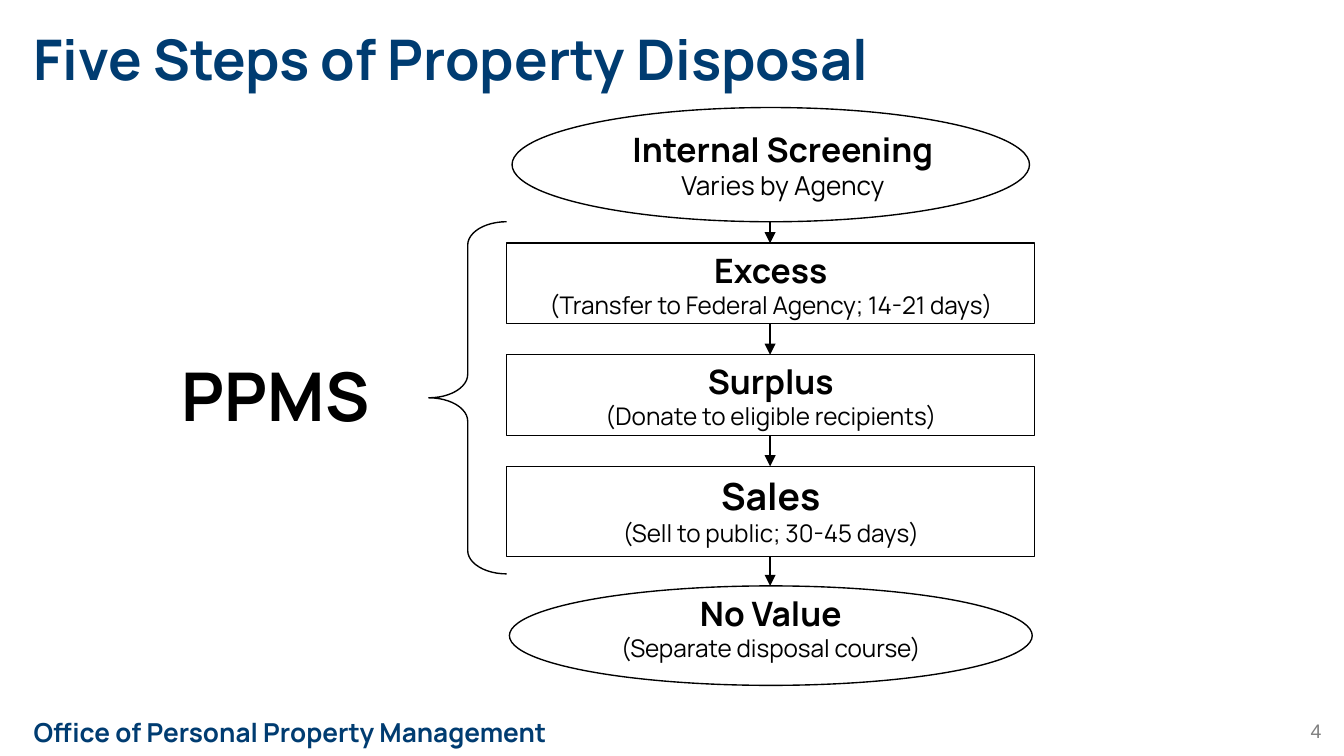
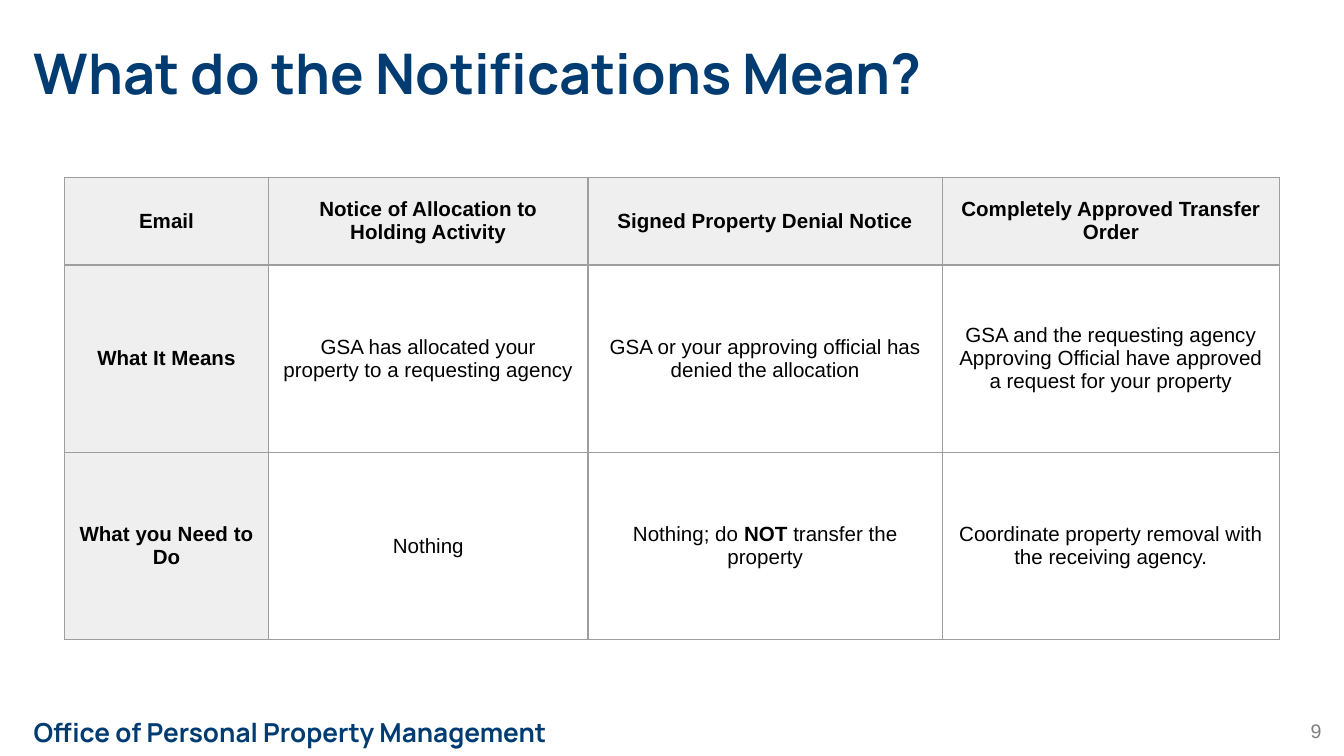
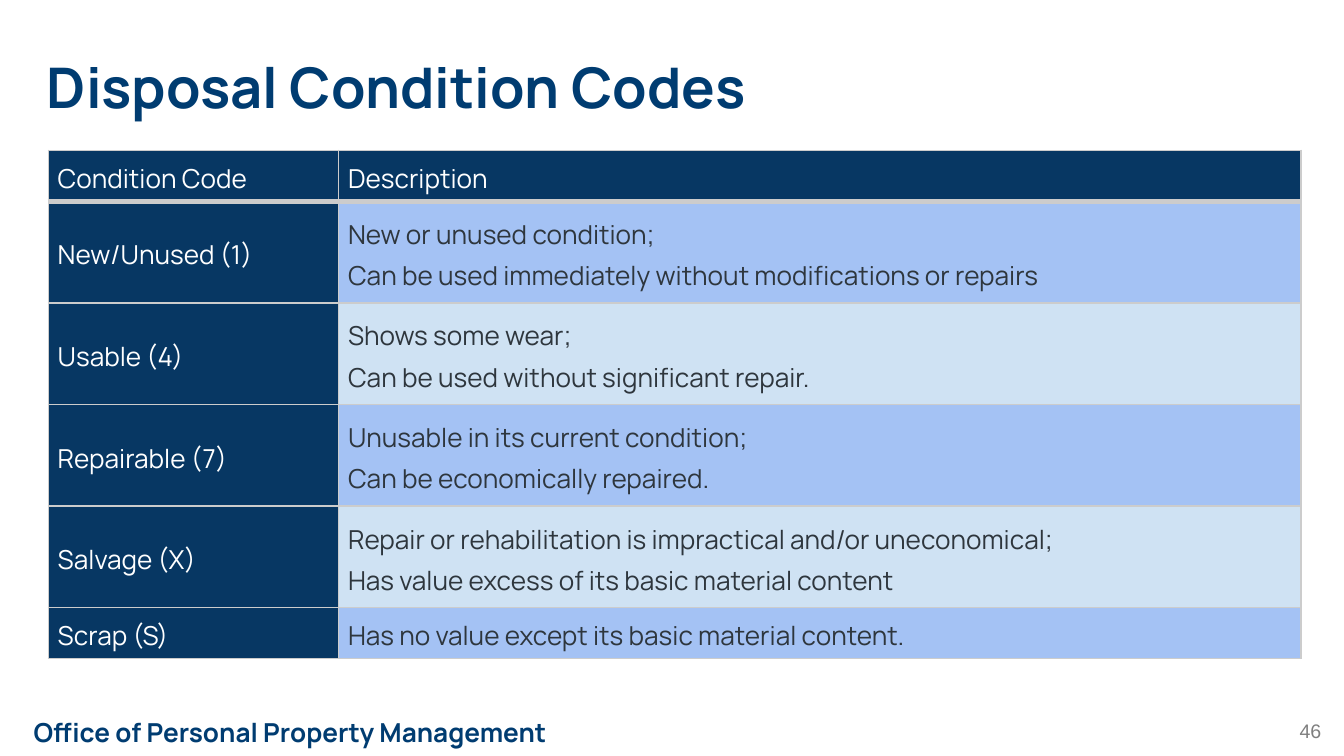
from dataclasses import dataclass, replace

import pptx
import pptx.util
import pptx.dml.color
import pptx.enum.shapes
import pptx.enum.text
import pptx.oxml.ns
from lxml import etree

Inches = pptx.util.Inches
ALIGN = pptx.enum.text.PP_ALIGN
ANCHOR = pptx.enum.text.MSO_ANCHOR
SHAPE = pptx.enum.shapes.MSO_SHAPE


@dataclass(frozen=True)
class Style:
    size: float
    color: str
    font: str = "Manrope"
    bold: bool = False
    align: int = ALIGN.LEFT
    spacing: float = 1.0


class Theme:
    BLACK, WHITE, LIGHT_GRAY = "000000", "FFFFFF", "EFEFEF"
    NAVY, BRAND = "073763", "003C71"
    BAND_DARK, BAND_LIGHT = "A4C2F4", "CFE2F3"
    GRID_GRAY, GRID_SILVER = "9E9E9E", "CCCCCC"
    LINE = 0.75
    TITLE = Style(30, BRAND, bold=True)
    FOOTER = Style(14, BRAND, bold=True)
    NUMBER = Style(10.5, "7F7F7F", "Arial", align=ALIGN.RIGHT)
    SYSTEM = Style(36, BLACK, bold=True, align=ALIGN.CENTER)
    STEP = Style(18, BLACK, bold=True, align=ALIGN.CENTER)
    DETAIL = Style(13, BLACK, align=ALIGN.CENTER)
    NOTICE = Style(11, BLACK, "Arial", align=ALIGN.CENTER)
    CODE = Style(14, WHITE, spacing=1.15)
    DESCRIPTION = Style(14, "2E363D", spacing=1.15)


def rgb(value):
    return pptx.dml.color.RGBColor.from_string(value)


def format_paragraph(p, style):
    p.alignment = style.align
    p.line_spacing = style.spacing
    for r in p.runs:
        r.font.name = style.font
        r.font.size = pptx.util.Pt(style.size)
        r.font.bold = style.bold
        r.font.color.rgb = rgb(style.color)


def write(tf, text, *styles):
    """Give each paragraph its style; the last style serves the rest."""
    tf.text = text
    for i, p in enumerate(tf.paragraphs):
        format_paragraph(p, styles[min(i, len(styles) - 1)])


def embolden(p, word, style):
    before, word, after = p.text.partition(word)
    p.text = before
    for part in (word, after):
        p.add_run().text = part
    format_paragraph(p, style)
    p.runs[1].font.bold = True


def set_margins(target, x, y):
    target.margin_left = target.margin_right = Inches(x)
    target.margin_top = target.margin_bottom = Inches(y)


def add_text(s, box, text, *styles, margins=(0.1, 0.05), anchor=ANCHOR.TOP):
    tf = s.shapes.add_textbox(*map(Inches, box)).text_frame
    tf.word_wrap = True
    tf.vertical_anchor = anchor
    set_margins(tf, *margins)
    write(tf, text, *styles)


def add_shape(s, kind, box, fill=None, line=None):
    sp = s.shapes.add_shape(kind, *map(Inches, box))
    sp.shadow.inherit = False
    if fill:
        sp.fill.solid()
        sp.fill.fore_color.rgb = rgb(fill)
    else:
        sp.fill.background()
    if line:
        sp.line.color.rgb = rgb(line)
        sp.line.width = pptx.util.Pt(Theme.LINE)
    else:
        sp.line.fill.background()
    return sp


def add_text_shape(s, box, text, *styles, line=None):
    sp = add_shape(s, SHAPE.RECTANGLE, box, Theme.WHITE, line)
    tf = sp.text_frame
    tf.word_wrap = True
    tf.vertical_anchor = ANCHOR.TOP
    set_margins(tf, 0.1, 0.05)
    write(tf, text, *styles)


def add_down_arrow(s, x, top, bottom):
    line = s.shapes.add_connector(
        pptx.enum.shapes.MSO_CONNECTOR.STRAIGHT,
        Inches(x), Inches(top), Inches(x), Inches(bottom))
    line.line.color.rgb = rgb(Theme.BLACK)
    line.line.width = pptx.util.Pt(Theme.LINE)
    qn = pptx.oxml.ns.qn
    etree.SubElement(line.line._get_or_add_ln(), qn("a:tailEnd"), type="triangle")
    etree.SubElement(line._element.spPr, qn("a:effectLst"))


def set_borders(cell, color, **widths):
    """Draw the borders named L, R, T and B, in that order, in points."""
    qn = pptx.oxml.ns.qn
    tc_pr = cell._tc.get_or_add_tcPr()
    for side, width in widths.items():
        ln = etree.SubElement(tc_pr, qn(f"a:ln{side}"),
                              w=str(pptx.util.Pt(width)))
        fill = etree.SubElement(ln, qn("a:solidFill"))
        etree.SubElement(fill, qn("a:srgbClr"), val=color)


def add_table(s, box, cols, rows, texts, margins, look, grid, width,
              header_width):
    """Share the box out by cols and rows; look(row, col) gives style and fill."""
    left, top, table_width, table_height = map(Inches, box)
    table = s.shapes.add_table(len(rows), len(cols), left, top,
                               table_width, table_height).table
    table.first_row = table.horz_banding = False
    for col, share in zip(table.columns, cols):
        col.width = int(table_width * share / sum(cols))
    for i, share in enumerate(rows):
        table.rows[i].height = int(table_height * share / sum(rows))
        for j, text in enumerate(texts[i]):
            cell = table.cell(i, j)
            style, fill = look(i, j)
            set_margins(cell, *margins)
            cell.vertical_anchor = ANCHOR.MIDDLE
            write(cell.text_frame, text, style)
            set_borders(cell, grid, L=width, R=width,
                        T=header_width if i == 1 else width,
                        B=header_width if i == 0 else width)
            if fill:
                cell.fill.solid()
                cell.fill.fore_color.rgb = rgb(fill)
            else:
                cell.fill.background()
    return table


def add_slide(prs, title, number, title_top=0.29, title_margin=0):
    s = prs.slides.add_slide(prs.slide_layouts[6])
    add_text(s, (0.25, 5.35, 4.42, 0.19), "Office of Personal Property Management",
             Theme.FOOTER, margins=(0, 0), anchor=ANCHOR.MIDDLE)
    add_text(s, (9.46, 5.3, 0.47, 0.28), str(number), Theme.NUMBER)
    add_text(s, (0.25, title_top, 8.51, 0.56), title, Theme.TITLE,
             margins=(title_margin, title_margin))
    return s


def build_steps(prs):
    s = add_slide(prs, "Five Steps of Property Disposal", 4, title_top=0.18)
    add_text_shape(s, (1.09, 2.59, 1.92, 0.56), "PPMS", Theme.SYSTEM)
    brace = add_shape(s, SHAPE.LEFT_BRACE, (3.19, 1.65, 0.58, 2.62),
                      line=Theme.BLACK)
    brace.adjustments[0] = 0.3

    step, detail = Theme.STEP, Theme.DETAIL
    screening, no_value = (3.81, 0.8, 3.85, 0.85), (3.79, 4.36, 3.89, 0.74)
    boxes = [
        (1.81, 0.6, "Excess\n(Transfer to Federal Agency; 14-21 days)", step),
        (2.64, 0.6, "Surplus\n(Donate to eligible recipients)", step),
        (3.47, 0.67, "Sales\n(Sell to public; 30-45 days)",
         replace(step, size=20)),
    ]
    for top, height, text, style in boxes:
        add_text_shape(s, (3.77, top, 3.93, height), text, style, detail,
                       line=Theme.BLACK)
    add_text(s, (3.95, 0.91, 3.75, 0.32), "Internal Screening\nVaries by Agency",
             step, replace(detail, size=14))
    add_text(s, (3.92, 4.36, 3.63, 0.56), "No Value\n(Separate disposal course)",
             step, detail)
    for oval in (screening, no_value):
        add_shape(s, SHAPE.OVAL, oval, line=Theme.BLACK)

    spans = [(screening[1], screening[3]), *(b[:2] for b in boxes),
             (no_value[1], no_value[3])]
    for (top, height), (next_top, _) in zip(spans, spans[1:]):
        add_down_arrow(s, 5.73, top + height, next_top)


def notice_look(row, col):
    if row == 0 or col == 0:
        return replace(Theme.NOTICE, bold=True), Theme.LIGHT_GRAY
    return Theme.NOTICE, None


def build_notifications(prs):
    s = add_slide(prs, "What do the Notifications Mean?", 9)
    texts = [
        ["Email", "Notice of Allocation to Holding Activity",
         "Signed Property Denial Notice", "Completely Approved Transfer Order"],
        ["What It Means",
         "GSA has allocated your property to a requesting agency",
         "GSA or your approving official has denied the allocation",
         "GSA and the requesting agency Approving Official have approved "
         "a request for your property"],
        ["What you Need to Do", "Nothing",
         "Nothing; do NOT transfer the property",
         "Coordinate property removal with the receiving agency."],
    ]
    table = add_table(s, (0.48, 1.32, 9.04, 3.44), [1.52, 2.38, 2.64, 2.51],
                      [0.65, 1.39, 1.39], texts, (0.1, 0.07), notice_look,
                      Theme.GRID_GRAY, 0.75, 0.75)
    embolden(table.cell(2, 2).text_frame.paragraphs[0], "NOT", Theme.NOTICE)


def code_look(row, col):
    if row == 0 or col == 0:
        return Theme.CODE, Theme.NAVY
    return Theme.DESCRIPTION, Theme.BAND_DARK if row % 2 else Theme.BAND_LIGHT


def build_codes(prs):
    s = add_slide(prs, "Disposal Condition Codes", 46, title_margin=0.1)
    texts = [
        ("Condition Code", "Description"),
        ("New/Unused (1)", "New or unused condition;\n"
         "Can be used immediately without modifications or repairs"),
        ("Usable (4)", "Shows some wear;\n"
         "Can be used without significant repair."),
        ("Repairable (7)", "Unusable in its current condition;\n"
         "Can be economically repaired."),
        ("Salvage (X)",
         "Repair or rehabilitation is impractical and/or uneconomical;\n"
         "Has value excess of its basic material content"),
        ("Scrap (S)", "Has no value except its basic material content."),
    ]
    line_counts = [1 + text.count("\n") for _, text in texts]
    add_table(s, (0.36, 1.12, 9.32, 3.78), [2.16, 7.16], line_counts, texts,
              (0.07, 0), code_look, Theme.GRID_SILVER, 1, 3)


def main():
    prs = pptx.Presentation()
    prs.slide_width = Inches(10)
    prs.slide_height = prs.slide_width * 9 // 16
    build_steps(prs)
    build_notifications(prs)
    build_codes(prs)
    prs.save("out.pptx")


if __name__ == "__main__":
    main()
